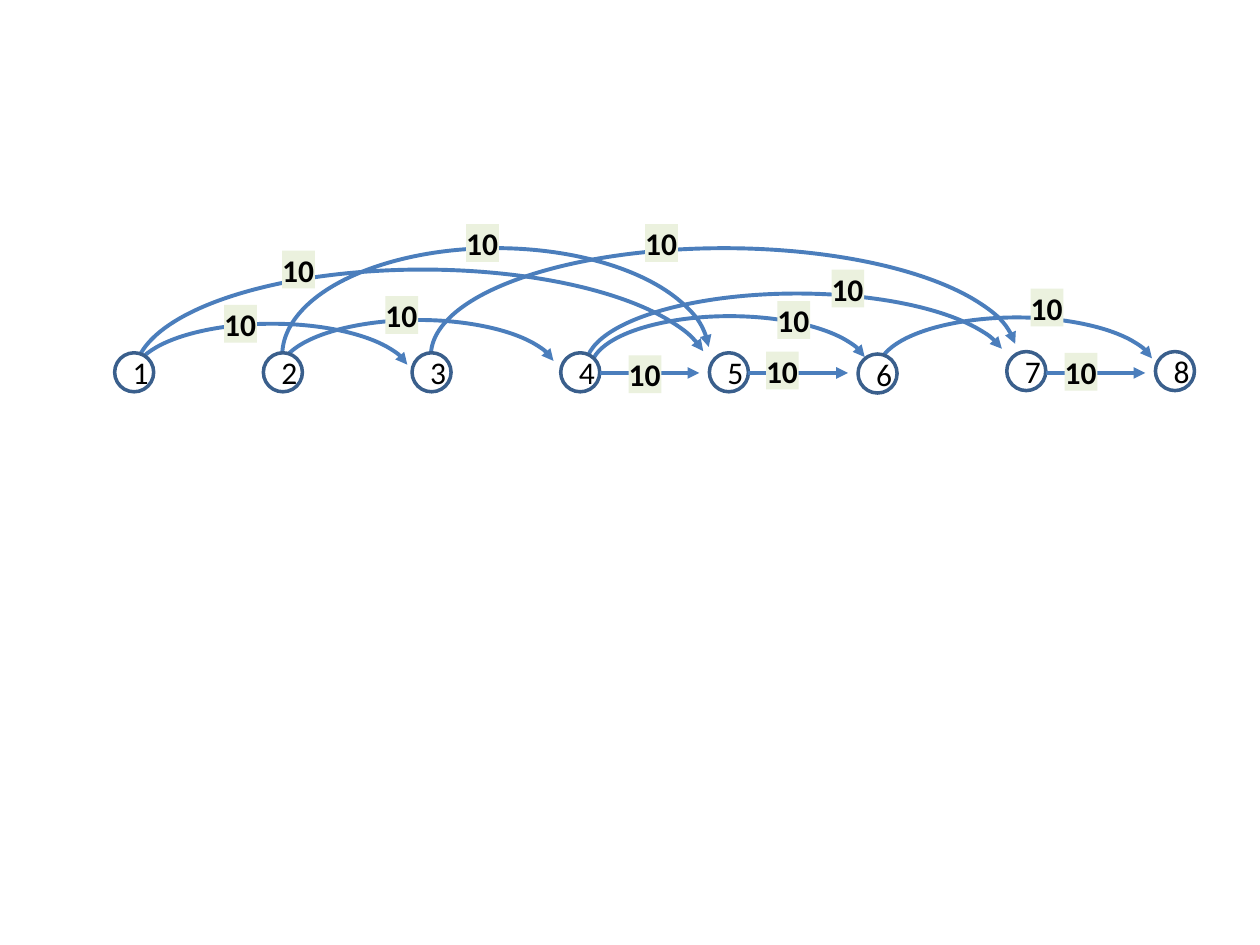
from lxml import etree
from pptx import Presentation
from pptx import util as u
from pptx.dml import color
from pptx.enum import shapes, text
from pptx.oxml import ns

COLORS = {"edge": "4B7EBC", "ring": "3A5F8C", "node": "FFFFFF",
          "label": "EBF1DE", "text": "000000"}
COLUMNS, ROWS = 100, 75
NODE, PITCH, FIRST = 3.1, 11.8, 9.1
EDGE_ROW, EDGE_LENGTH = 29.6, 7.9
NODE_TOPS = [28, 28, 28, 28, 28, 28.1, 27.9, 27.9]
LOW, HIGH = 213.11, 214.65
ARCS = [
    (10.6, 25.7, 22, 8.3, LOW),
    (10.7, 21.4, 45.7, 16.7, LOW),
    (22.4, 19.7, 33.9, 17, HIGH),
    (69.7, 25.2, 22, 8.3, LOW),
    (46.9, 25.1, 22, 8.3, LOW),
    (34.2, 19.7, 46.5, 17, HIGH),
    (46.5, 23.3, 33.5, 11.5, LOW),
    (22.2, 25.4, 22, 8.3, LOW),
]
STRAIGHT_FROM = [4, 5, 7]
LABELS = [(22.4, 19.9), (30.6, 23.5), (37, 17.8), (51.2, 17.8),
          (81.8, 22.9), (66, 21.4), (61.7, 23.9), (60.8, 27.9),
          (49.9, 28.2), (84.5, 28), (17.8, 24.2)]


class Graph:
    font = "Calibri"
    size = 18

    def __init__(self, prs):
        self.s = prs.slides.add_slide(prs.slide_layouts[6])
        self.col = prs.slide_width / COLUMNS
        self.row = prs.slide_height / ROWS

    def box(self, x, y, w, h):
        return [u.Emu(round(v)) for v in
                (x * self.col, y * self.row, w * self.col, h * self.row)]

    def rgb(self, name):
        return color.RGBColor.from_string(COLORS[name])

    def fill(self, sp, name):
        sp.fill.solid()
        sp.fill.fore_color.rgb = self.rgb(name)

    def line(self, sp, name, width):
        sp.line.color.rgb = self.rgb(name)
        sp.line.width = u.Pt(width)

    def arrow(self, sp):
        self.line(sp, "edge", 2.25)
        ln = sp._element.spPr.find(ns.qn("a:ln"))
        etree.SubElement(ln, ns.qn("a:tailEnd"), type="triangle")

    def put_text(self, tf, words, align, bold=False):
        tf.vertical_anchor = text.MSO_ANCHOR.MIDDLE
        p = tf.paragraphs[0]
        p.alignment = align
        r = p.add_run()
        r.text = words
        r.font.name = self.font
        r.font.size = u.Pt(self.size)
        r.font.bold = bold
        r.font.color.rgb = self.rgb("text")

    def arc(self, x, y, w, h, end):
        sp = self.s.shapes.add_shape(shapes.MSO_SHAPE.ARC, *self.box(x, y, w, h))
        sp.adjustments[0] = 108.25
        sp.adjustments[1] = end
        sp.fill.background()
        self.arrow(sp)
        sp.shadow.inherit = False

    def node(self, words, x, y):
        sp = self.s.shapes.add_shape(shapes.MSO_SHAPE.OVAL,
                                     *self.box(x, y, NODE, NODE))
        self.fill(sp, "node")
        self.line(sp, "ring", 2)
        sp.shadow.inherit = False
        self.put_text(sp.text_frame, words, text.PP_ALIGN.CENTER)

    def edge(self, x, y, length):
        left, top, width, _ = self.box(x, y, length, 0)
        sp = self.s.shapes.add_connector(shapes.MSO_CONNECTOR.STRAIGHT,
                                         left, top, left + width, top)
        self.arrow(sp)
        etree.SubElement(sp._element.spPr, ns.qn("a:effectLst"))

    def label(self, words, x, y):
        sp = self.s.shapes.add_textbox(*self.box(x, y, 2.6, 3))
        self.fill(sp, "label")
        tf = sp.text_frame
        tf.word_wrap = False
        tf.auto_size = text.MSO_AUTO_SIZE.SHAPE_TO_FIT_TEXT
        tf.margin_left = tf.margin_right = tf.margin_top = tf.margin_bottom = 0
        self.put_text(tf, words, text.PP_ALIGN.LEFT, bold=True)


def main():
    prs = Presentation()
    prs.slide_width, prs.slide_height = u.Inches(10), u.Inches(7.5)
    graph = Graph(prs)
    for arc in ARCS:
        graph.arc(*arc)
    for i, top in enumerate(NODE_TOPS):
        graph.node(str(i + 1), FIRST + i * PITCH, top)
    for number in STRAIGHT_FROM:
        graph.edge(FIRST + (number - 1) * PITCH + NODE, EDGE_ROW, EDGE_LENGTH)
    for x, y in LABELS:
        graph.label("10", x, y)
    prs.save("out.pptx")


if __name__ == "__main__":
    main()
